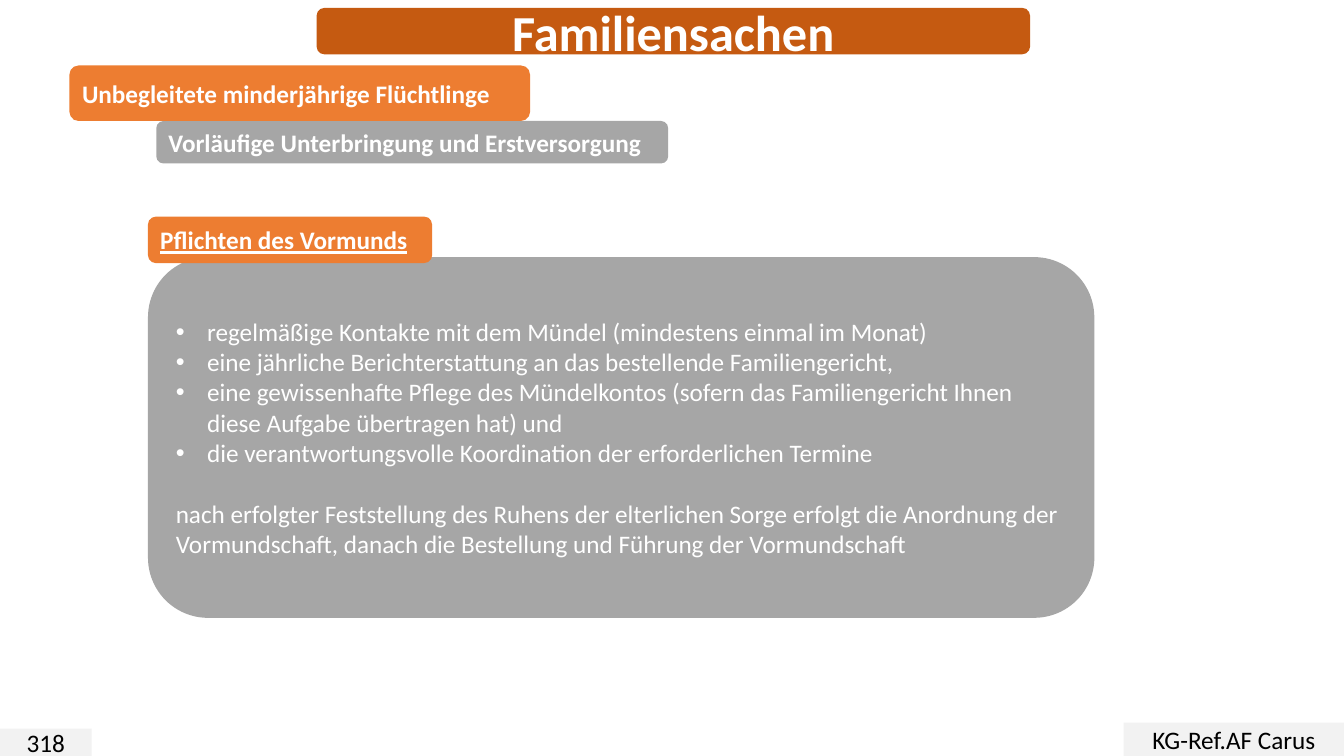
from lxml import etree
from pptx import Presentation
from pptx.dml.color import RGBColor
from pptx.enum.shapes import MSO_SHAPE
from pptx.enum.text import MSO_ANCHOR, MSO_AUTO_SIZE, PP_ALIGN
from pptx.oxml.ns import qn
from pptx.util import Cm, Pt

ROUNDED, RECT = MSO_SHAPE.ROUNDED_RECTANGLE, MSO_SHAPE.RECTANGLE
LEFT, CENTER = PP_ALIGN.LEFT, PP_ALIGN.CENTER
MIDDLE = MSO_ANCHOR.MIDDLE
NO_AUTOFIT = MSO_AUTO_SIZE.NONE

COLORS = {
    "rust": "C55A11",
    "orange": "ED7D31",
    "gray": "A6A6A6",
    "pale": "F2F2F2",
    "white": "FFFFFF",
    "black": "000000",
}
BASE_FONT = {"name": "Calibri", "size": Pt(18), "bold": False}
BOLD = {"bold": True}
TITLE_FONT = {"bold": True, "size": Pt(36)}
UNDERLINED = {"bold": True, "underline": True}
LINE_GAP = Pt(22)
BULLET_INDENT = Cm(0.79)

DUTIES = [
    "regelmäßige Kontakte mit dem Mündel (mindestens einmal im Monat)",
    "eine jährliche Berichterstattung an das bestellende Familiengericht,",
    "eine gewissenhafte Pflege des Mündelkontos (sofern das Familiengericht "
    "Ihnen diese Aufgabe übertragen hat) und",
    "die verantwortungsvolle Koordination der erforderlichen Termine",
]
PROCEDURE = (
    "nach erfolgter Feststellung des Ruhens der elterlichen Sorge erfolgt die "
    "Anordnung der Vormundschaft, danach die Bestellung und Führung der Vormundschaft"
)


def rgb(color):
    return RGBColor.from_string(COLORS[color])


def set_attributes(target, values):
    for attribute, value in values.items():
        setattr(target, attribute, value)


def write(paragraph, text, color="white", align=LEFT, font=None):
    paragraph.alignment = align
    run = paragraph.add_run()
    run.text = text
    set_attributes(run.font, {**BASE_FONT, **(font or {})})
    run.font.color.rgb = rgb(color)


def set_bullet(paragraph, bulleted):
    properties = paragraph._p.get_or_add_pPr()
    indent = BULLET_INDENT if bulleted else 0
    properties.set("marL", str(indent))
    properties.set("indent", str(-indent))
    if bulleted:
        font = etree.SubElement(properties, qn("a:buFont"))
        font.set("typeface", "Arial")
        etree.SubElement(properties, qn("a:buChar")).set("char", "•")
    else:
        etree.SubElement(properties, qn("a:buNone"))


def add_panel(slide, box, fill, kind=ROUNDED):
    panel = slide.shapes.add_shape(kind, *map(Cm, box))
    panel.shadow.inherit = False
    panel.fill.solid()
    panel.fill.fore_color.rgb = rgb(fill)
    panel.line.fill.background()
    return panel


def add_label(slide, text, box, fill, kind=ROUNDED, **style):
    frame = add_panel(slide, box, fill, kind).text_frame
    set_attributes(frame, {"word_wrap": True, "vertical_anchor": MIDDLE})
    write(frame.paragraphs[0], text, **style)


def place_in_front(placeholder, box, margin_x):
    sides = ("left", "top", "width", "height")
    set_attributes(placeholder, dict(zip(sides, map(Cm, box))))
    set_attributes(placeholder.text_frame, {
        "word_wrap": True, "auto_size": NO_AUTOFIT, "vertical_anchor": MIDDLE,
        "margin_left": Cm(margin_x), "margin_right": Cm(margin_x),
        "margin_top": 0, "margin_bottom": 0,
    })
    placeholder.element.getparent().append(placeholder.element)
    return placeholder.text_frame


def add_title(slide):
    add_panel(slide, (7.98, 0.2, 17.98, 1.17), "rust")
    frame = place_in_front(slide.shapes.title, (7.98, 0, 17.98, 1.57), 0.25)
    write(frame.paragraphs[0], "Familiensachen", align=CENTER, font=TITLE_FONT)


def add_duties(slide):
    box = (3.73, 6.48, 23.85, 9.09)
    add_panel(slide, box, "gray")
    frame = place_in_front(slide.placeholders[1], box, 0.7)
    for index, text in enumerate([*DUTIES, PROCEDURE]):
        paragraph = frame.add_paragraph() if index else frame.paragraphs[0]
        bulleted = text != PROCEDURE
        paragraph.space_before = Pt(0) if bulleted else LINE_GAP
        set_bullet(paragraph, bulleted)
        write(paragraph, text)


def main():
    presentation = Presentation()
    presentation.slide_width, presentation.slide_height = Cm(33.87), Cm(19.05)
    slide = presentation.slides.add_slide(presentation.slide_layouts[1])

    add_duties(slide)
    add_title(slide)
    add_label(slide, "318", (0, 18.36, 2.31, 0.69), "pale", RECT,
              color="black", align=CENTER)
    add_label(slide, "KG-Ref.AF Carus", (28.32, 18.21, 5.55, 0.84), "pale", RECT,
              color="black", align=CENTER)
    add_label(slide, "Vorläufige Unterbringung und Erstversorgung",
              (3.94, 3.05, 12.9, 1.07), "gray", font=BOLD)
    add_label(slide, "Unbegleitete minderjährige Flüchtlinge",
              (1.75, 1.65, 11.61, 1.4), "orange", font=BOLD)
    add_label(slide, "Pflichten des Vormunds",
              (3.73, 5.46, 7.16, 1.17), "orange", font=UNDERLINED)

    presentation.save("out.pptx")


if __name__ == "__main__":
    main()
